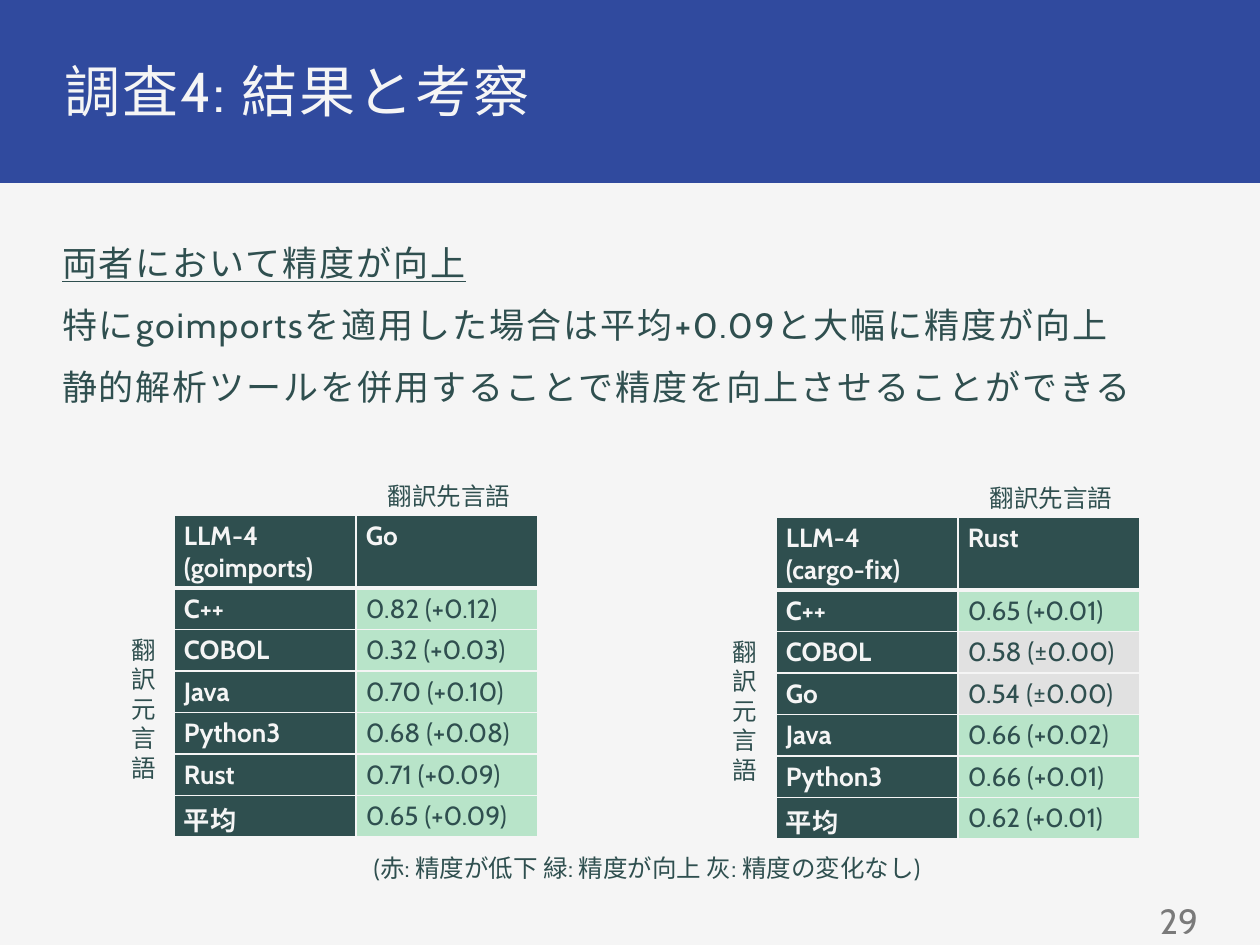
from lxml import etree
from pptx import Presentation
from pptx import util as u
from pptx.dml import color as dml
from pptx.enum import shapes, text
from pptx.oxml import ns

SCALE = 914400 / 126
PAPER, INK, BLUE, GREY = "F5F5F5", "2F4F4F", "304A9E", "7A7A7A"
BETTER, SAME = "B8E4C9", "E1E1E1"
CENTER, RIGHT = text.PP_ALIGN.CENTER, text.PP_ALIGN.RIGHT
INSETS = ("margin_left", "margin_top", "margin_right", "margin_bottom")

GO_ROWS = [
    ("C++", "0.82 (+0.12)"),
    ("COBOL", "0.32 (+0.03)"),
    ("Java", "0.70 (+0.10)"),
    ("Python3", "0.68 (+0.08)"),
    ("Rust", "0.71 (+0.09)"),
    ("平均", "0.65 (+0.09)"),
]
RUST_ROWS = [
    ("C++", "0.65 (+0.01)"),
    ("COBOL", "0.58 (±0.00)"),
    ("Go", "0.54 (±0.00)"),
    ("Java", "0.66 (+0.02)"),
    ("Python3", "0.66 (+0.01)"),
    ("平均", "0.62 (+0.01)"),
]


def px(value):
    """Turn pixels into EMU."""
    return u.Emu(round(value * SCALE))


def rgb(value):
    """Turn a hex string into a colour."""
    return dml.RGBColor.from_string(value)


def apply(target, values):
    """Set each attribute named in a dict of format values."""
    for name, value in values.items():
        setattr(target, name, value)


def paint(target, color):
    """Give a shape, cell or background a solid fill."""
    target.fill.solid()
    target.fill.fore_color.rgb = rgb(color)


def write(frame, lines, size, color, layout=None, spacing=0, **font):
    """Write one paragraph per line in a text frame."""
    for index, line in enumerate(lines):
        paragraph = frame.add_paragraph() if index else frame.paragraphs[0]
        apply(paragraph, layout or {})
        run = paragraph.add_run()
        run.text = line
        apply(run.font, {"name": "Cabin", "size": u.Pt(size), **font})
        run.font.color.rgb = rgb(color)
        if spacing:
            run.font._element.set("spc", str(spacing))


def add_text(slide, box, lines, size, color, insets=(13, 6, 13, 6),
             anchor=text.MSO_ANCHOR.TOP, **style):
    """Add a wrapping text box and return its frame."""
    frame = slide.shapes.add_textbox(*map(px, box)).text_frame
    apply(frame, {"word_wrap": True, "vertical_anchor": anchor})
    apply(frame, dict(zip(INSETS, map(px, insets))))
    write(frame, lines, size, color, **style)
    return frame


def add_border(cell, side, width):
    """Draw one border of a cell."""
    line = etree.SubElement(cell._tc.get_or_add_tcPr(), ns.qn(f"a:{side}"),
                            w=str(u.Pt(width)))
    fill = etree.SubElement(line, ns.qn("a:solidFill"))
    etree.SubElement(fill, ns.qn("a:srgbClr"), val=PAPER)


def format_cell(cell, lines, fill, color, bold, top, bottom):
    """Fill in one table cell with its text, borders and colour."""
    apply(cell, dict(zip(INSETS, map(px, (10, 5, 10, 5)))))
    write(cell.text_frame, lines, 15, color, bold=bold)
    for side, width in (("lnL", 1), ("lnR", 1), ("lnT", top), ("lnB", bottom)):
        add_border(cell, side, width)
    paint(cell, fill)


def add_header(slide, box, title):
    """Add the title band across the top."""
    left, top, width, height = box
    band = slide.shapes.add_shape(shapes.MSO_SHAPE.RECTANGLE, *map(px, box))
    band.shadow.inherit = False
    paint(band, BLUE)
    band.line.fill.background()
    add_text(slide, (left + 54, top + 54, width - 110, 74), [title], 32, PAPER,
             insets=(10, 10, 10, 8), spacing=110,
             layout={"line_spacing": 0.9, "space_before": u.Pt(16)})


def add_findings(slide, box, lines):
    """Add the findings with the first line underlined."""
    frame = add_text(slide, box, lines, 20, INK, insets=(8, 8, 8, 8), spacing=110,
                     layout={"line_spacing": 0.9, "space_before": u.Pt(14)})
    frame.paragraphs[0].runs[0].font.underline = True


def add_results(slide, box, tool, target, rows):
    """Add a result table with its source and target language labels."""
    left, top, width, height = box
    table_left, table_top = left + 56, top + 40
    table_width = width - 56
    table = slide.shapes.add_table(
        len(rows) + 1, 2, *map(px, (table_left, table_top, table_width, 39 * (len(rows) + 1)))
    ).table
    apply(table, {"first_row": False, "horz_banding": False})
    for row in table.rows:
        row.height = px(39)
    for column, lines in enumerate((["LLM-4", f"({tool})"], [target])):
        format_cell(table.cell(0, column), lines, INK, PAPER, True, 1, 3)
    for index, (language, score) in enumerate(rows, 1):
        edge = 3 if index == 1 else 1
        fill = SAME if "±" in score else BETTER
        format_cell(table.cell(index, 0), [language], INK, PAPER, True, edge, 1)
        format_cell(table.cell(index, 1), [score], fill, INK, False, edge, 1)
    add_text(slide, (left, top + 154, 56, 161), ["翻訳元言語"], 14, INK)
    add_text(slide, (left + width - 178, top, 178, 43), ["翻訳先言語"], 14, INK,
             layout={"alignment": CENTER})


def add_footer(slide, box, legend, number):
    """Add the colour legend and the page number."""
    left, top, width, height = box
    add_text(slide, (left, top, 788, 43), [legend], 14, INK,
             layout={"alignment": CENTER})
    add_text(slide, (left + width - 284, top + height - 49, 284, 49), [number], 20, GREY,
             insets=(8, 8, 8, 8), anchor=text.MSO_ANCHOR.MIDDLE,
             layout={"alignment": RIGHT})


def main():
    """Build and save the results slide."""
    presentation = Presentation()
    apply(presentation, {"slide_width": px(1260), "slide_height": px(945)})
    slide = presentation.slides.add_slide(presentation.slide_layouts[6])
    paint(slide.background, PAPER)
    add_header(slide, (0, 0, 1260, 183), "調査4: 結果と考察")
    add_findings(slide, (54, 238, 1150, 200), [
        "両者において精度が向上",
        "特にgoimportsを適用した場合は平均+0.09と大幅に精度が向上",
        "静的解析ツールを併用することで精度を向上させることができる",
    ])
    add_results(slide, (118, 475, 420, 370), "goimports", "Go", GO_ROWS)
    add_results(slide, (720, 477, 420, 370), "cargo-fix", "Rust", RUST_ROWS)
    add_footer(slide, (253, 847, 953, 98),
               "(赤: 精度が低下 緑: 精度が向上 灰: 精度の変化なし)", "29")
    presentation.save("out.pptx")


if __name__ == "__main__":
    main()
